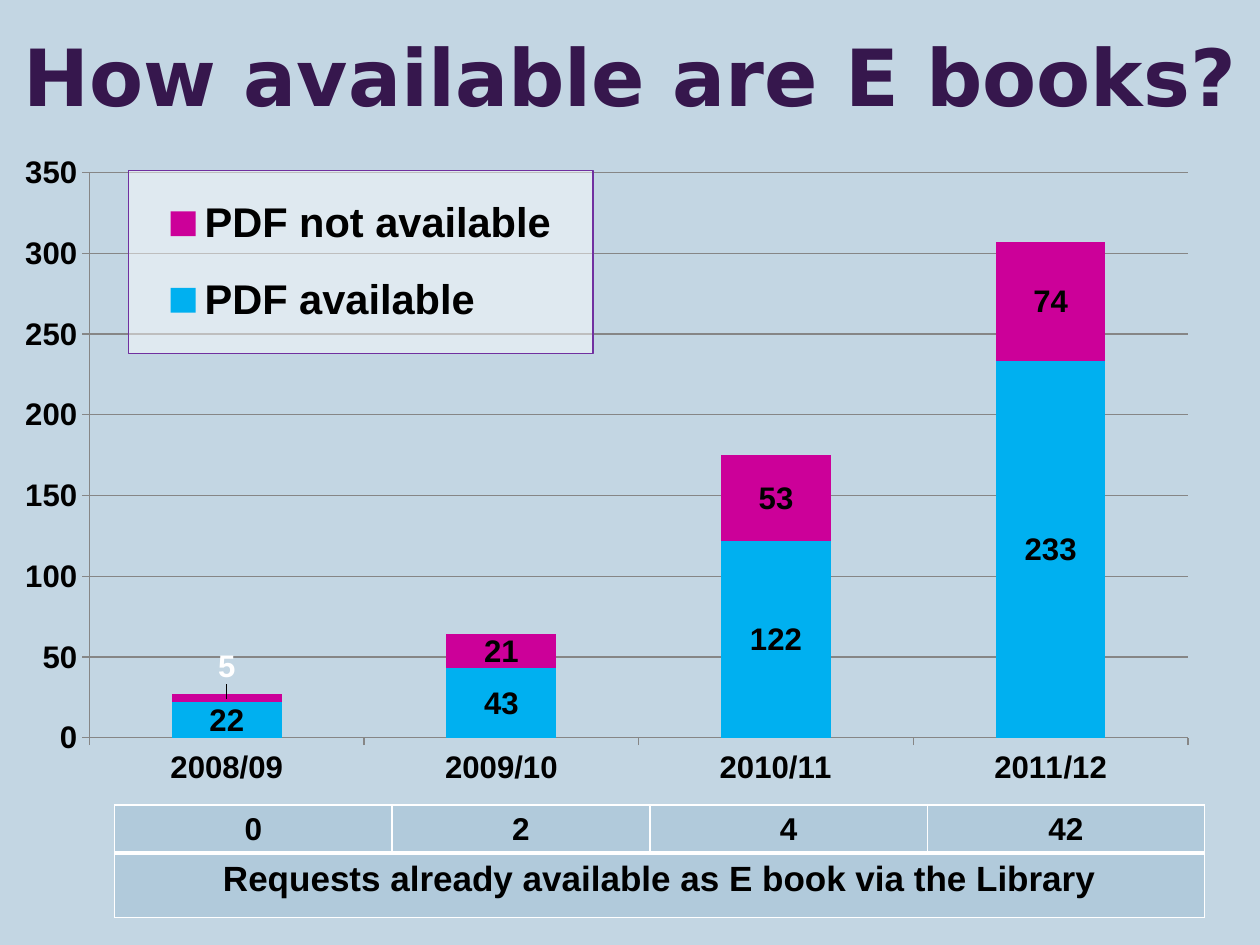
import pptx
import pptx.chart.data
import pptx.dml.color
import pptx.enum.chart
import pptx.enum.text
import pptx.oxml
import pptx.oxml.ns
import pptx.util
from dataclasses import dataclass


@dataclass(frozen=True)
class Theme:
    background: str = "C3D6E3"
    cell: str = "B1CADB"
    title: str = "36174D"
    text: str = "000000"
    light: str = "FFFFFF"
    grid: str = "868686"
    legend_line: str = "7030A0"
    available: str = "00B0F0"
    missing: str = "CC0099"
    body_font: str = "Arial"
    title_font: str = "DejaVu Sans"
    title_size: int = 45
    legend_size: int = 24
    caption_size: int = 20
    body_size: int = 18


theme = Theme()


def style_font(font, size, color=theme.text, name=theme.body_font):
    font.name, font.size, font.bold = name, pptx.util.Pt(size), True
    font.color.rgb = pptx.dml.color.RGBColor.from_string(color)


def xml_element(tag, content):
    spaces = pptx.oxml.ns.nsdecls("a", "c")
    return pptx.oxml.parse_xml(f"<{tag} {spaces}>{content}</{tag.split()[0]}>")


deck = pptx.Presentation()
deck.slide_width, deck.slide_height = pptx.util.Inches(10), pptx.util.Inches(7.5)
inch = pptx.util.Inches

# Page and title
page = deck.slides.add_slide(deck.slide_layouts[5])
page.background.fill.solid()
page.background.fill.fore_color.rgb = pptx.dml.color.RGBColor.from_string(theme.background)
title = page.shapes.title
title.left, title.top = 0, inch(-0.03)
title.width, title.height = deck.slide_width, inch(1.25)
title.text_frame.text = "How available are E books?"
title.text_frame.vertical_anchor = pptx.enum.text.MSO_ANCHOR.MIDDLE
para = title.text_frame.paragraphs[0]
para.alignment = pptx.enum.text.PP_ALIGN.CENTER
style_font(para.runs[0].font, theme.title_size, theme.title, theme.title_font)

# Request table: one count per year above a merged caption
counts = ["0", "2", "4", "42"]
caption = "Requests already available as E book via the Library"
table = page.shapes.add_table(2, 4, inch(0.91), inch(6.39), inch(8.65), inch(0.88)).table
table.first_row = table.horz_banding = False
for column, width in zip(table.columns, [2.2, 2.05, 2.2, 2.2]):
    column.width = inch(width)
for row, height in zip(table.rows, [0.37, 0.51]):
    row.height = inch(height)
table.cell(1, 0).merge(table.cell(1, 3))

rows = [(counts, theme.body_size, {"L": 1, "R": 1, "T": 1, "B": 3}),
        ([caption, "", "", ""], theme.caption_size, {"L": 1, "R": 1, "T": 3, "B": 1})]
for row_index, (texts, size, borders) in enumerate(rows):
    for column_index, text in enumerate(texts):
        cell = table.cell(row_index, column_index)
        cell.fill.solid()
        cell.fill.fore_color.rgb = pptx.dml.color.RGBColor.from_string(theme.cell)
        properties = cell._tc.get_or_add_tcPr()
        for position, (side, points) in enumerate(borders.items()):
            properties.insert(position, xml_element(
                f'a:ln{side} w="{pptx.util.Pt(points)}"',
                f'<a:solidFill><a:srgbClr val="{theme.light}"/></a:solidFill>'))
        if text:
            cell.text_frame.text = text
            para = cell.text_frame.paragraphs[0]
            para.alignment = pptx.enum.text.PP_ALIGN.CENTER
            style_font(para.runs[0].font, size)

# Stacked column chart
data = pptx.chart.data.CategoryChartData()
data.categories = ["2008/09", "2009/10", "2010/11", "2011/12"]
data.add_series("PDF available", [22, 43, 122, 233])
data.add_series("PDF not available", [5, 21, 53, 74])
chart = page.shapes.add_chart(
    pptx.enum.chart.XL_CHART_TYPE.COLUMN_STACKED,
    inch(0.2), inch(1.23), inch(9.53), inch(5.04), data).chart
chart.has_title = False
style_font(chart.font, theme.body_size)
plot = chart.plots[0]
plot.gap_width, plot.overlap, plot.vary_by_categories = 150, 100, False
for series, color in zip(plot.series, [theme.available, theme.missing]):
    series.format.fill.solid()
    series.format.fill.fore_color.rgb = pptx.dml.color.RGBColor.from_string(color)
    series.data_labels.show_value = True
    style_font(series.data_labels.font, theme.body_size)

# Axes
value_axis, category_axis = chart.value_axis, chart.category_axis
value_axis.minimum_scale, value_axis.maximum_scale, value_axis.major_unit = 0, 350, 50
value_axis.has_major_gridlines = True
for axis in (value_axis, category_axis):
    axis.major_tick_mark = pptx.enum.chart.XL_TICK_MARK.OUTSIDE
    style_font(axis.tick_labels.font, theme.body_size)
for part in (value_axis, category_axis, value_axis.major_gridlines):
    part.format.line.color.rgb = pptx.dml.color.RGBColor.from_string(theme.grid)
    part.format.line.width = pptx.util.Pt(0.75)

# The small first value is lifted above its bar
label = plot.series[1].points[0].data_label
style_font(label.font, theme.body_size, theme.light)
index = label._dLbl.find(pptx.oxml.ns.qn("c:idx"))
index.addnext(xml_element(
    "c:spPr", f'<a:solidFill><a:srgbClr val="{theme.missing}"/></a:solidFill>'))
index.addnext(xml_element(
    "c:layout", '<c:manualLayout><c:x val="0"/><c:y val="-0.05"/></c:manualLayout>'))

# Legend panel over the plot
chart.has_legend = True
legend = chart.legend
legend.position = pptx.enum.chart.XL_LEGEND_POSITION.RIGHT
legend.include_in_layout = False
style_font(legend.font, theme.legend_size)
legend._element.find(pptx.oxml.ns.qn("c:overlay")).addnext(xml_element(
    "c:spPr",
    f'<a:solidFill><a:srgbClr val="{theme.light}"><a:alpha val="47000"/></a:srgbClr></a:solidFill>'
    f'<a:ln w="{pptx.util.Pt(0.75)}"><a:solidFill><a:srgbClr val="{theme.legend_line}"/>'
    "</a:solidFill></a:ln>"))

# Places of plot and legend as shares of the chart
plot_area = chart._chartSpace.chart.plotArea
for layout in plot_area.findall(pptx.oxml.ns.qn("c:layout")):
    plot_area.remove(layout)
for layout in legend._element.findall(pptx.oxml.ns.qn("c:layout")):
    legend._element.remove(layout)
places = [(plot_area, 0, '<c:layoutTarget val="inner"/>', (0.043, 0.016, 0.925, 0.901)),
          (legend._element, 1, "", (0.076, 0.013, 0.391, 0.291))]
for parent, position, target, shares in places:
    modes = '<c:xMode val="edge"/><c:yMode val="edge"/>'
    sizes = "".join(f'<c:{key} val="{share}"/>' for key, share in zip("xywh", shares))
    parent.insert(position, xml_element(
        "c:layout", f"<c:manualLayout>{target}{modes}{sizes}</c:manualLayout>"))

deck.save("out.pptx")
